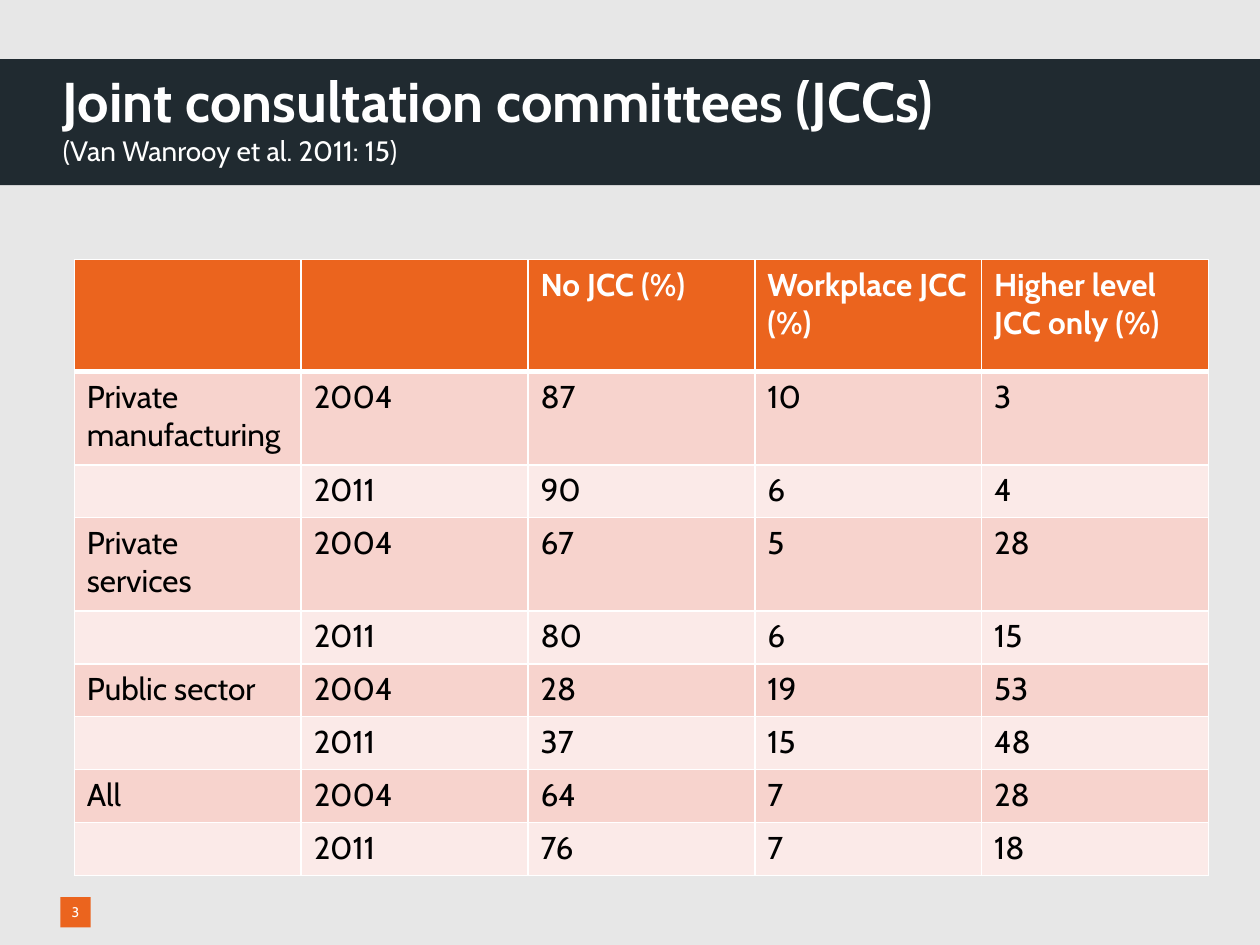
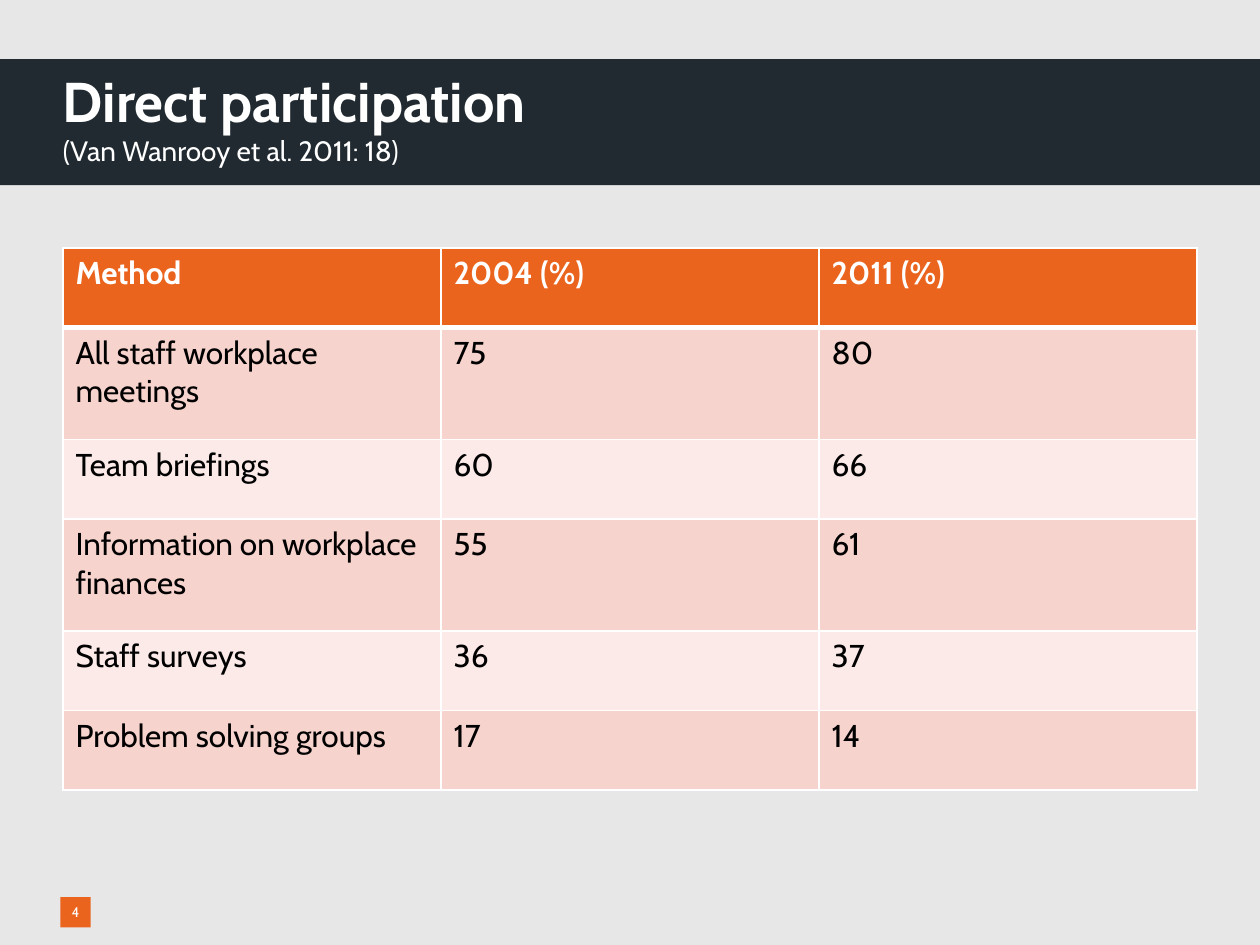
"""Build two slides of workplace participation tables."""
from lxml.etree import SubElement
from pptx import Presentation
from pptx.dml.color import RGBColor as RGB
from pptx.enum.shapes import MSO_SHAPE as SHAPE
from pptx.enum.text import MSO_ANCHOR as ANCHOR, PP_ALIGN as ALIGN
from pptx.oxml.ns import qn
from pptx.util import Inches, Pt

COLORS = {
    "background": "E7E7E7",
    "band": "202A30",
    "accent": "EB641E",
    "odd": "F7D3CD",
    "even": "FBEAE8",
    "white": "FFFFFF",
    "black": "000000",
}
FORMATS = {
    "title": {"size": Pt(32), "bold": True, "color": "white"},
    "source": {"size": Pt(16), "bold": False, "color": "white"},
    "number": {"size": Pt(8), "bold": False, "color": "white"},
    "header": {"size": Pt(18), "bold": True, "color": "white"},
    "body": {"size": Pt(18), "bold": False, "color": "black"},
}
SLIDES = [
    {
        "title": "Joint consultation committees (JCCs)",
        "source": "(Van Wanrooy et al. 2011: 15)",
        "left": 0.59,
        "top": 2.06,
        "heights": [0.89, 0.74, 0.42, 0.74] + [0.42] * 5,
        "rows": [
            ["", "", "No JCC (%)", "Workplace JCC (%)", "Higher level JCC only (%)"],
            ["Private manufacturing", "2004", "87", "10", "3"],
            ["", "2011", "90", "6", "4"],
            ["Private services", "2004", "67", "5", "28"],
            ["", "2011", "80", "6", "15"],
            ["Public sector", "2004", "28", "19", "53"],
            ["", "2011", "37", "15", "48"],
            ["All", "2004", "64", "7", "28"],
            ["", "2011", "76", "7", "18"],
        ],
    },
    {
        "title": "Direct participation",
        "source": "(Van Wanrooy et al. 2011: 18)",
        "left": 0.5,
        "top": 1.97,
        "heights": [0.63, 0.89, 0.63, 0.89, 0.63, 0.63],
        "rows": [
            ["Method", "2004 (%)", "2011 (%)"],
            ["All staff workplace meetings", "75", "80"],
            ["Team briefings", "60", "66"],
            ["Information on workplace finances", "55", "61"],
            ["Staff surveys", "36", "37"],
            ["Problem solving groups", "17", "14"],
        ],
    },
]
TABLE_WIDTH = 9
FIRST_NUMBER = 3


def add_run(p, text, style):
    r = p.add_run()
    r.text = text
    r.font.name = "Cabin"
    for name, value in FORMATS[style].items():
        if name == "color":
            r.font.color.rgb = RGB.from_string(COLORS[value])
        else:
            setattr(r.font, name, value)


def add_rect(s, left, top, width, height, color):
    sp = s.shapes.add_shape(SHAPE.RECTANGLE, Inches(left), Inches(top), Inches(width), Inches(height))
    sp.shadow.inherit = False
    sp.fill.solid()
    sp.fill.fore_color.rgb = RGB.from_string(COLORS[color])
    sp.line.fill.background()
    return sp


prs = Presentation()
prs.slide_width, prs.slide_height = Inches(10), Inches(7.5)

for number, data in enumerate(SLIDES, FIRST_NUMBER):
    s = prs.slides.add_slide(prs.slide_layouts[6])
    s.background.fill.solid()
    s.background.fill.fore_color.rgb = RGB.from_string(COLORS["background"])

    add_rect(s, 0, 0.47, 10, 1, "band")
    title = s.shapes.add_textbox(Inches(0.5), Inches(0.42), Inches(7.16), Inches(1.01))
    badge = add_rect(s, 0.48, 7.12, 0.24, 0.24, "accent")
    for sp in (title, badge):
        tf = sp.text_frame
        tf.word_wrap = True
        tf.vertical_anchor = ANCHOR.MIDDLE
        for side in ("left", "top", "right", "bottom"):
            setattr(tf, f"margin_{side}", 0)

    p = title.text_frame.paragraphs[0]
    add_run(p, data["title"], "title")
    p.add_line_break()
    add_run(p, data["source"], "source")

    p = badge.text_frame.paragraphs[0]
    p.alignment = ALIGN.CENTER
    add_run(p, str(number), "number")

    rows, heights = data["rows"], data["heights"]
    n_cols = len(rows[0])
    table = s.shapes.add_table(
        len(rows), n_cols, Inches(data["left"]), Inches(data["top"]),
        Inches(TABLE_WIDTH), Inches(sum(heights)),
    ).table
    for col in table.columns:
        col.width = Inches(TABLE_WIDTH / n_cols)
    for i, (values, height) in enumerate(zip(rows, heights)):
        table.rows[i].height = Inches(height)
        fill = "accent" if i == 0 else "odd" if i % 2 else "even"
        thick = {0: "lnB", 1: "lnT"}.get(i)
        for j, text in enumerate(values):
            cell = table.cell(i, j)
            tc_pr = cell._tc.get_or_add_tcPr()
            for tag in ("lnL", "lnR", "lnT", "lnB"):
                ln = SubElement(tc_pr, qn(f"a:{tag}"), w=str(Pt(3 if tag == thick else 1)))
                solid = SubElement(ln, qn("a:solidFill"))
                SubElement(solid, qn("a:srgbClr"), val=COLORS["white"])
            cell.fill.solid()
            cell.fill.fore_color.rgb = RGB.from_string(COLORS[fill])
            if text:
                add_run(cell.text_frame.paragraphs[0], text, "body" if i else "header")

prs.save("out.pptx")
